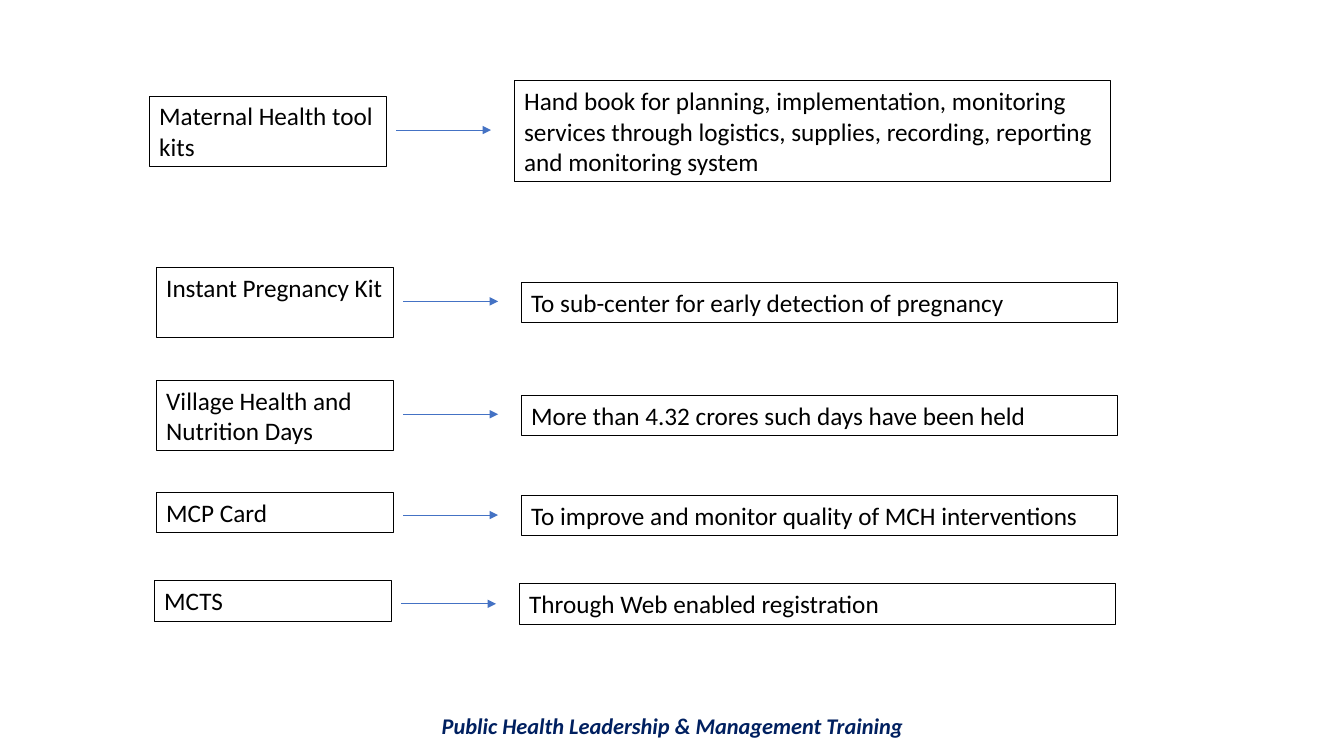
from lxml import etree
from pptx import Presentation
from pptx.dml.color import RGBColor
from pptx.enum.shapes import MSO_CONNECTOR, MSO_SHAPE
from pptx.enum.text import MSO_ANCHOR, PP_ALIGN
from pptx.oxml.ns import qn
from pptx.util import Pt

EMU_PER_PX = 9144
BLACK = RGBColor(0x00, 0x00, 0x00)
BLUE = RGBColor(0x44, 0x72, 0xC4)
NAVY = RGBColor(0x00, 0x20, 0x60)
RECTANGLE = MSO_SHAPE.RECTANGLE
STRAIGHT = MSO_CONNECTOR.STRAIGHT
TOP = MSO_ANCHOR.TOP
LEFT = PP_ALIGN.LEFT
CENTER = PP_ALIGN.CENTER

TOOL_WIDTH = 235
DETAIL_WIDTH = 591
ARROW_START = 245
ARROW_END = 339
DETAIL_OFFSET = 362
LINE_HEIGHT = 30
PADDING = 10

ROWS = [
    (148, 129, 95, 2, "Maternal Health tool kits", 80, 3,
     "Hand book for planning, implementation, monitoring services through "
     "logistics, supplies, recording, reporting and monitoring system"),
    (155, 299, 265, 2, "Instant Pregnancy Kit", 280, 1,
     "To sub-center for early detection of pregnancy"),
    (155, 411, 377, 2, "Village Health and Nutrition Days", 392, 1,
     "More than 4.32 crores such days have been held"),
    (155, 511, 488, 1, "MCP Card", 491, 1,
     "To improve and monitor quality of MCH interventions"),
    (153, 599, 576, 1, "MCTS", 579, 1,
     "Through Web enabled registration"),
]


def px(*lengths):
    return [length * EMU_PER_PX for length in lengths]


def write_text(frame, text, size, color, alignment):
    frame.word_wrap = True
    frame.vertical_anchor = TOP
    frame.text = text
    paragraph = frame.paragraphs[0]
    paragraph.alignment = alignment
    font = paragraph.runs[0].font
    font.name = "Calibri"
    font.size = Pt(size)
    font.color.rgb = color
    return font


def add_box(slide, left, top, width, line_count, text):
    height = line_count * LINE_HEIGHT + PADDING
    box = slide.shapes.add_shape(RECTANGLE, *px(left, top, width, height))
    box.shadow.inherit = False
    box.fill.background()
    box.line.color.rgb = BLACK
    box.line.width = Pt(0.25)
    write_text(box.text_frame, text, 18, BLACK, LEFT)


def add_arrow(slide, start, end, y):
    arrow = slide.shapes.add_connector(STRAIGHT, *px(start, y, end, y))
    arrow.line.color.rgb = BLUE
    arrow.line.width = Pt(0.5)
    etree.SubElement(arrow.line._get_or_add_ln(), qn("a:tailEnd"), type="triangle")
    etree.SubElement(arrow._element.spPr, qn("a:effectLst"))


def add_footer(slide, text):
    footer = slide.shapes.add_textbox(*px(92, 702, 1150, 37))
    font = write_text(footer.text_frame, text, 16, NAVY, CENTER)
    font.bold = True
    font.italic = True


def main():
    presentation = Presentation()
    presentation.slide_width, presentation.slide_height = px(1333, 750)
    slide = presentation.slides.add_slide(presentation.slide_layouts[6])
    add_footer(slide, "Public Health Leadership & Management Training")
    for left, arrow_y, tool_top, tool_lines, tool, detail_top, detail_lines, detail in ROWS:
        add_box(slide, left, tool_top, TOOL_WIDTH, tool_lines, tool)
        add_arrow(slide, left + ARROW_START, left + ARROW_END, arrow_y)
        add_box(slide, left + DETAIL_OFFSET, detail_top, DETAIL_WIDTH, detail_lines, detail)
    presentation.save("out.pptx")


if __name__ == "__main__":
    main()
